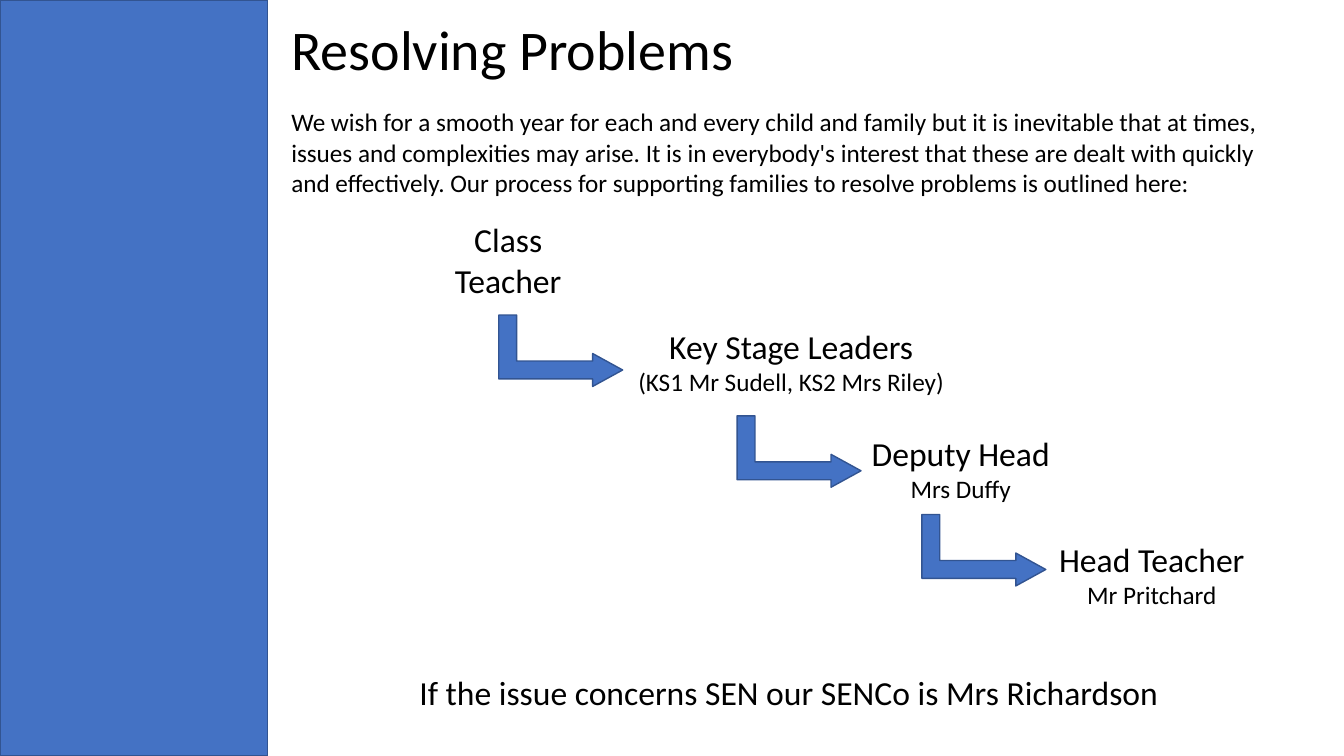
from pptx import Presentation
from pptx.dml.color import RGBColor
from pptx.enum.shapes import MSO_SHAPE as Shape
from pptx.enum.text import MSO_ANCHOR as Anchor, MSO_AUTO_SIZE as AutoSize, PP_ALIGN as Align
from pptx.util import Emu, Pt

PX = 9525  # 96 px to the inch
BLUE, EDGE, BLACK = "4472C4", "325491", "000000"


def paint(shape):
    shape.shadow.inherit = False
    shape.fill.solid()
    shape.fill.fore_color.rgb = RGBColor.from_string(BLUE)
    shape.line.color.rgb = RGBColor.from_string(EDGE)
    shape.line.width = Pt(1)


def write(holder, box, lines, align=Align.LEFT):
    for side, length in zip(("left", "top", "width", "height"), box):
        setattr(holder, side, Emu(length * PX))
    frame = holder.text_frame
    frame_format = {"word_wrap": True, "auto_size": AutoSize.NONE, "vertical_anchor": Anchor.TOP}
    for name, value in frame_format.items():
        setattr(frame, name, value)
    frame.text = "\n".join(text for text, size in lines)
    for paragraph, (text, size) in zip(frame.paragraphs, lines):
        paragraph.alignment = align
        for name, value in {"name": "Calibri", "size": Pt(size)}.items():
            setattr(paragraph.font, name, value)
        paragraph.font.color.rgb = RGBColor.from_string(BLACK)


deck = Presentation()
deck.slide_width, deck.slide_height = Emu(1280 * PX), Emu(720 * PX)
slide = deck.slides.add_slide(deck.slide_layouts[5])
shapes = slide.shapes

# Side band
side_band = shapes.add_shape(Shape.RECTANGLE, 0, 0, Emu(255 * PX), deck.slide_height)
paint(side_band)

# Title and introduction
write(shapes.title, (268, 9, 444, 74), [("Resolving Problems", 40)])
introduction = (
    "We wish for a smooth year for each and every child and family but it is inevitable "
    "that at times, issues and complexities may arise. It is in everybody's interest that "
    "these are dealt with quickly and effectively. Our process for supporting families to "
    "resolve problems is outlined here:"
)
write(shapes.add_textbox(0, 0, 0, 0), (268, 97, 942, 97), [(introduction, 18)])

# People to contact, in order
contacts = [
    ((402, 204, 164, 87), [("Class Teacher", 24)]),
    ((593, 306, 321, 78), [("Key Stage Leaders", 24), ("(KS1 Mr Sudell, KS2 Mrs Riley)", 18)]),
    ((814, 408, 202, 78), [("Deputy Head", 24), ("Mrs Duffy", 18)]),
    ((984, 509, 226, 78), [("Head Teacher", 24), ("Mr Pritchard", 18)]),
]
for box, lines in contacts:
    write(shapes.add_textbox(0, 0, 0, 0), box, lines, Align.CENTER)

# Arrows from each contact to the next
for left, top in [(500, 275), (727, 371), (903, 465)]:
    step = shapes.add_shape(Shape.BENT_UP_ARROW, *(Emu(n * PX) for n in (left, top, 68, 118)))
    step.rotation = 90
    for index, ratio in enumerate((0.25, 0.23, 0.42)):
        step.adjustments[index] = ratio
    paint(step)

# Special needs contact
write(shapes.add_textbox(0, 0, 0, 0), (390, 635, 730, 48),
      [("If the issue concerns SEN our SENCo is Mrs Richardson", 24)])

deck.save("out.pptx")
